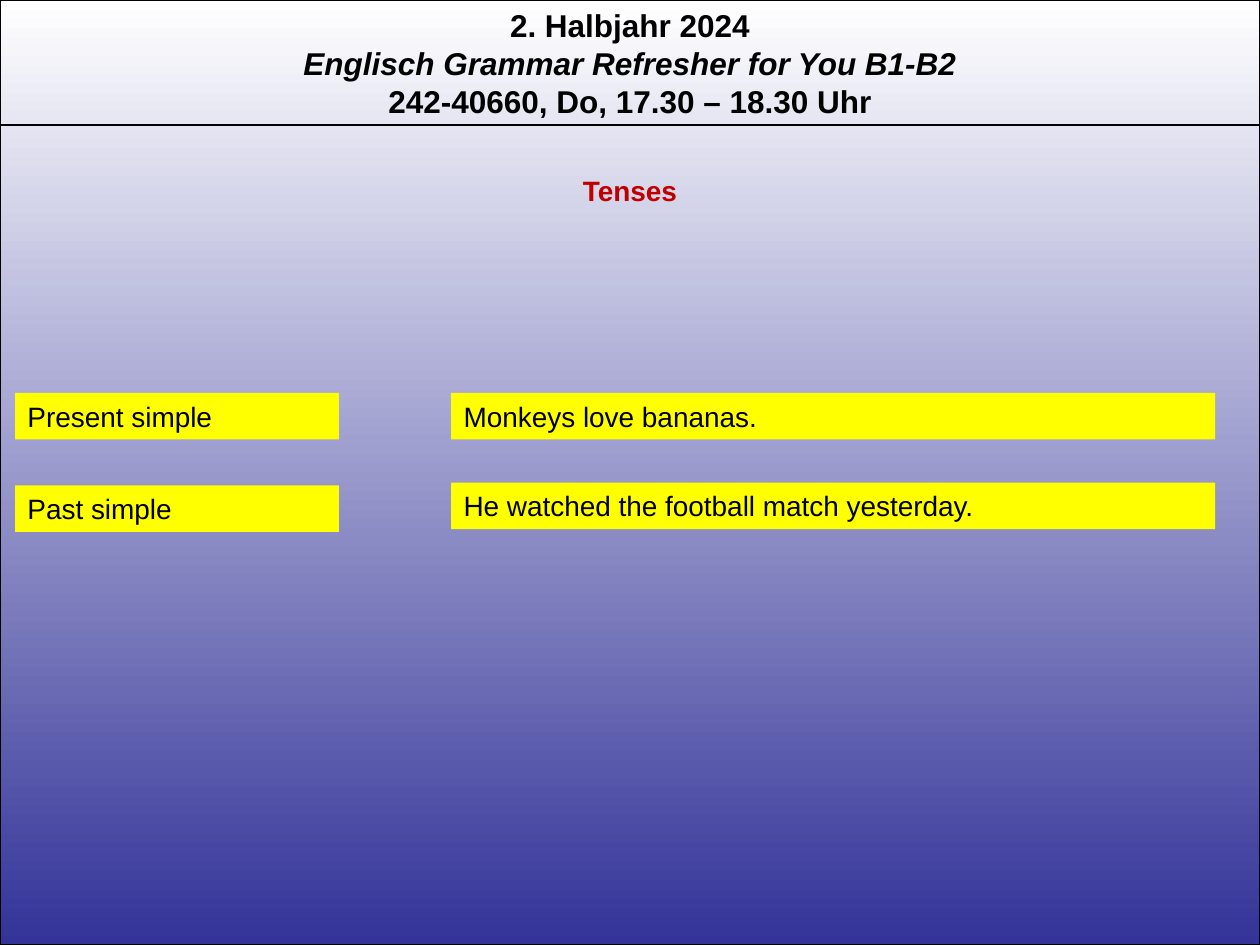
"""Build a grammar slide that pairs tenses with example sentences."""
from lxml import etree
from pptx import Presentation
from pptx import util as u
from pptx.dml import color
from pptx.enum import shapes, text
from pptx.oxml import ns

WIDTH, HEIGHT = 720, 540
HEADER_LINES = [
    ("2. Halbjahr 2024", False),
    ("Englisch Grammar Refresher for You B1-B2", True),
    ("242-40660, Do, 17.30 – 18.30 Uhr", False),
]
HEADING = "Tenses"
COLUMNS = [
    {"left": 8.64, "width": 185, "tops": (224.6, 277.4),
     "texts": ("Present simple", "Past simple")},
    {"left": 257.8, "width": 436.5, "tops": (224.6, 275.8),
     "texts": ("Monkeys love bananas.", "He watched the football match yesterday.")},
]
BOX_HEIGHT = 26.6


def rgb(value):
    return color.RGBColor.from_string(value)


def place(shape, left, top, width, height):
    shape.left, shape.top = u.Pt(left), u.Pt(top)
    shape.width, shape.height = u.Pt(width), u.Pt(height)


def write(shape, lines, size, ink="000000", bold=False, align=text.PP_ALIGN.CENTER):
    frame = shape.text_frame
    frame.word_wrap = True
    frame.auto_size = text.MSO_AUTO_SIZE.NONE
    frame.vertical_anchor = text.MSO_ANCHOR.TOP
    frame.margin_left = frame.margin_right = u.Pt(7.2)
    frame.margin_top = frame.margin_bottom = u.Pt(3.6)
    for index, (line, italic) in enumerate(lines):
        paragraph = frame.add_paragraph() if index else frame.paragraphs[0]
        paragraph.alignment = align
        paragraph.line_spacing = 1.0
        paragraph.space_before = u.Pt(0)
        run = paragraph.add_run()
        run.text = line
        run.font.name, run.font.size = "Arial", u.Pt(size)
        run.font.bold, run.font.italic = bold, italic
        run.font.color.rgb = rgb(ink)


def add_rectangle(slide, left, top, width, height):
    shape = slide.shapes.add_shape(
        shapes.MSO_SHAPE.RECTANGLE, u.Pt(left), u.Pt(top), u.Pt(width), u.Pt(height))
    shape.shadow.inherit = False
    return shape


def add_backdrop(slide):
    backdrop = add_rectangle(slide, 0, 0, WIDTH, HEIGHT)
    backdrop.fill.gradient()
    backdrop.fill.gradient_angle = 270
    for stop, (position, value) in zip(
            backdrop.fill.gradient_stops, [(0, "FFFFFF"), (1, "333399")]):
        stop.position, stop.color.rgb = position, rgb(value)
    backdrop.line.color.rgb = rgb("000000")
    backdrop.line.width = u.Pt(0.75)
    slide.shapes.title.element.addprevious(backdrop.element)


def add_header(slide):
    header = slide.shapes.add_textbox(0, 0, u.Pt(WIDTH), u.Pt(72.7))
    write(header, HEADER_LINES, 18, bold=True)
    rule = slide.shapes.add_connector(
        shapes.MSO_CONNECTOR.STRAIGHT, 0, u.Pt(71.5), u.Pt(WIDTH), u.Pt(71.5))
    rule.line.color.rgb = rgb("000000")
    rule.line.width = u.Pt(0.75)
    etree.SubElement(rule.element.spPr, ns.qn("a:effectLst"))


def main():
    presentation = Presentation()
    presentation.slide_width, presentation.slide_height = u.Pt(WIDTH), u.Pt(HEIGHT)
    slide = presentation.slides.add_slide(presentation.slide_layouts.get_by_name("Title Only"))
    add_backdrop(slide)
    add_header(slide)
    place(slide.shapes.title, 0, 95.8, WIDTH, BOX_HEIGHT)
    write(slide.shapes.title, [(HEADING, False)], 16, "C00000", bold=True)
    for column in COLUMNS:
        for top, line in zip(column["tops"], column["texts"]):
            box = add_rectangle(slide, column["left"], top, column["width"], BOX_HEIGHT)
            box.fill.solid()
            box.fill.fore_color.rgb = rgb("FFFF00")
            box.line.fill.background()
            write(box, [(line, False)], 16, align=text.PP_ALIGN.LEFT)
    presentation.save("out.pptx")


if __name__ == "__main__":
    main()
